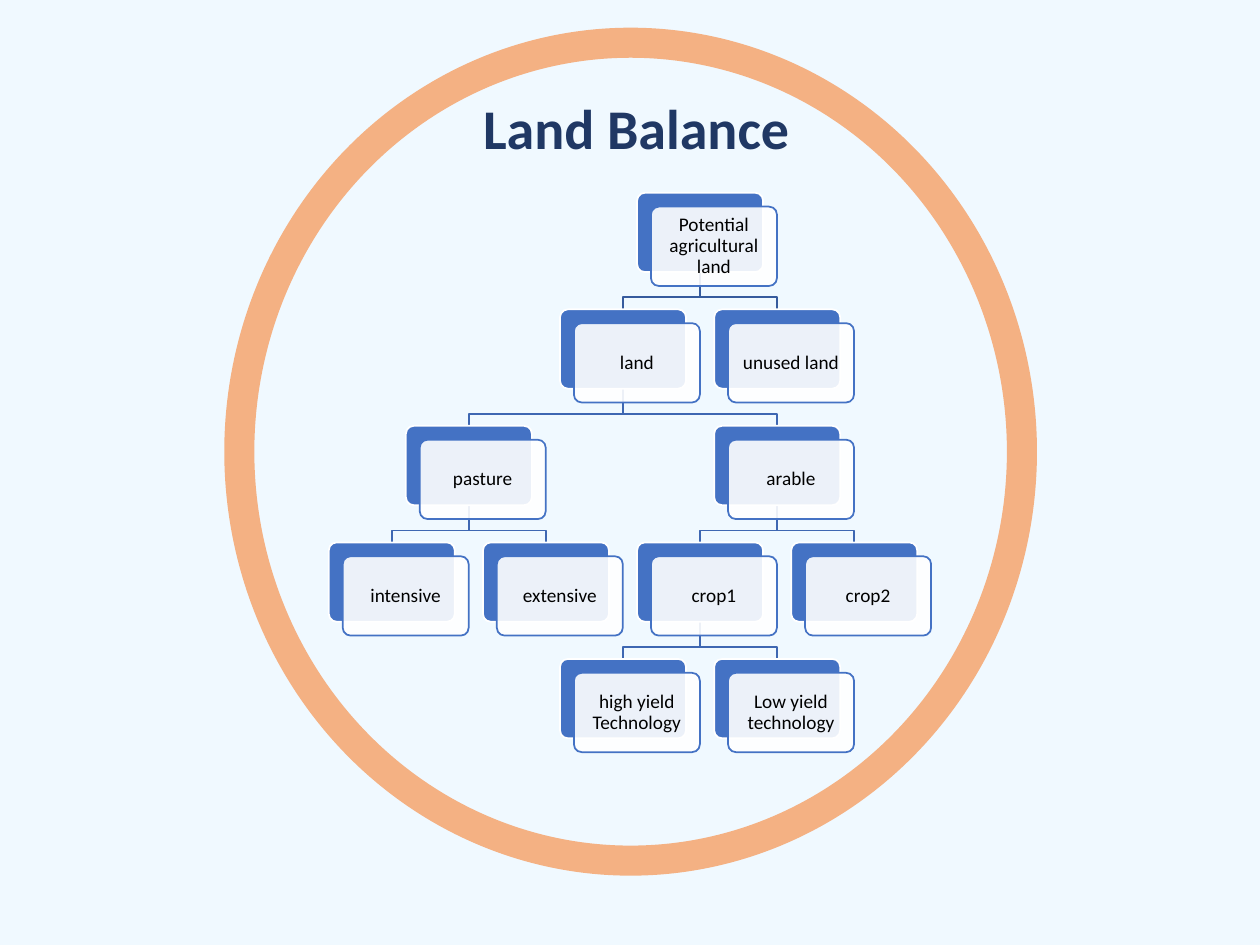
from pptx import Presentation
from pptx.dml.color import RGBColor
from pptx.enum.shapes import MSO_SHAPE as Shape
from pptx.enum.text import MSO_ANCHOR as Anchor, PP_ALIGN as Align
from pptx.oxml.ns import qn
from pptx.util import Inches, Pt
from lxml.etree import SubElement


def paint(target, color):
    target.solid()
    target.fore_color.rgb = RGBColor.from_string(color)


def add_card(slide, left, top, fill, line):
    card = slide.shapes.add_shape(
        Shape.ROUNDED_RECTANGLE, Inches(left), Inches(top), Inches(1), Inches(0.63)
    )
    card.adjustments[0] = 0.1
    card.shadow.inherit = False
    paint(card.fill, fill)
    paint(card.line.fill, line)
    card.line.width = Pt(1)
    return card


deck = Presentation()
deck.slide_width, deck.slide_height = Inches(10), Inches(7.5)
page = deck.slides.add_slide(deck.slide_layouts[5])
paint(page.background.fill, "F0F9FF")

ring = page.shapes.add_shape(
    Shape.DONUT, Inches(1.78), Inches(0.22), Inches(6.45), Inches(6.73)
)
ring.adjustments[0] = 0.037
ring.shadow.inherit = False
paint(ring.fill, "F4B183")
ring.line.fill.background()

title = page.shapes.title
title.left, title.top = Inches(1.87), Inches(0.75)
title.width, title.height = Inches(6.36), Inches(0.65)
title.text_frame.text = "Land Balance"
title.text_frame.vertical_anchor = Anchor.TOP
para = title.text_frame.paragraphs[0]
para.alignment = Align.CENTER
para.line_spacing = 0.9
para.font.name = "Calibri"
para.font.size = Pt(32)
para.font.bold = True
para.font.color.rgb = RGBColor.from_string("203864")

# name: (column, row, parent)
nodes = {
    "Potential agricultural land": (4, 0, None),
    "land": (3, 1, "Potential agricultural land"),
    "unused land": (5, 1, "Potential agricultural land"),
    "pasture": (1, 2, "land"),
    "arable": (5, 2, "land"),
    "intensive": (0, 3, "pasture"),
    "extensive": (2, 3, "pasture"),
    "crop1": (4, 3, "arable"),
    "crop2": (6, 3, "arable"),
    "high yield Technology": (3, 4, "crop1"),
    "Low yield technology": (5, 4, "crop1"),
}
column_step = 3.67 / 6
row_step = 3.7 / 4
corners = {
    name: (2.61 + column * column_step, 1.53 + row * row_step)
    for name, (column, row, parent) in nodes.items()
}

for name, (column, row, parent) in nodes.items():
    if parent is None:
        continue
    start_x, start_y = corners[parent][0] + 0.5, corners[parent][1] + 0.63
    end_x, end_y = corners[name][0] + 0.5, corners[name][1]
    bend_y = start_y + 0.2
    builder = page.shapes.build_freeform(Inches(start_x), Inches(start_y))
    builder.add_line_segments(
        [
            (Inches(start_x), Inches(bend_y)),
            (Inches(end_x), Inches(bend_y)),
            (Inches(end_x), Inches(end_y)),
        ],
        close=False,
    )
    branch = builder.convert_to_shape()
    branch.shadow.inherit = False
    branch.fill.background()
    paint(branch.line.fill, "365B9D" if row == 1 else "3E67B2")
    branch.line.width = Pt(1)

for name, (left, top) in corners.items():
    add_card(page, left, top, "4472C4", "FFFFFF")
    front = add_card(page, left + 0.11, top + 0.11, "FFFFFF", "4472C4")
    white = front.fill._xPr.find(qn("a:solidFill"))[0]
    SubElement(white, qn("a:alpha"), val="90000")
    frame = front.text_frame
    frame.word_wrap = True
    frame.vertical_anchor = Anchor.MIDDLE
    frame.margin_left = frame.margin_right = Inches(0.06)
    frame.margin_top = frame.margin_bottom = Inches(0.05)
    frame.text = name
    para = frame.paragraphs[0]
    para.alignment = Align.CENTER
    para.line_spacing = 0.9
    para.font.name = "Calibri"
    para.font.size = Pt(11)
    para.font.color.rgb = RGBColor.from_string("000000")

deck.save("out.pptx")
